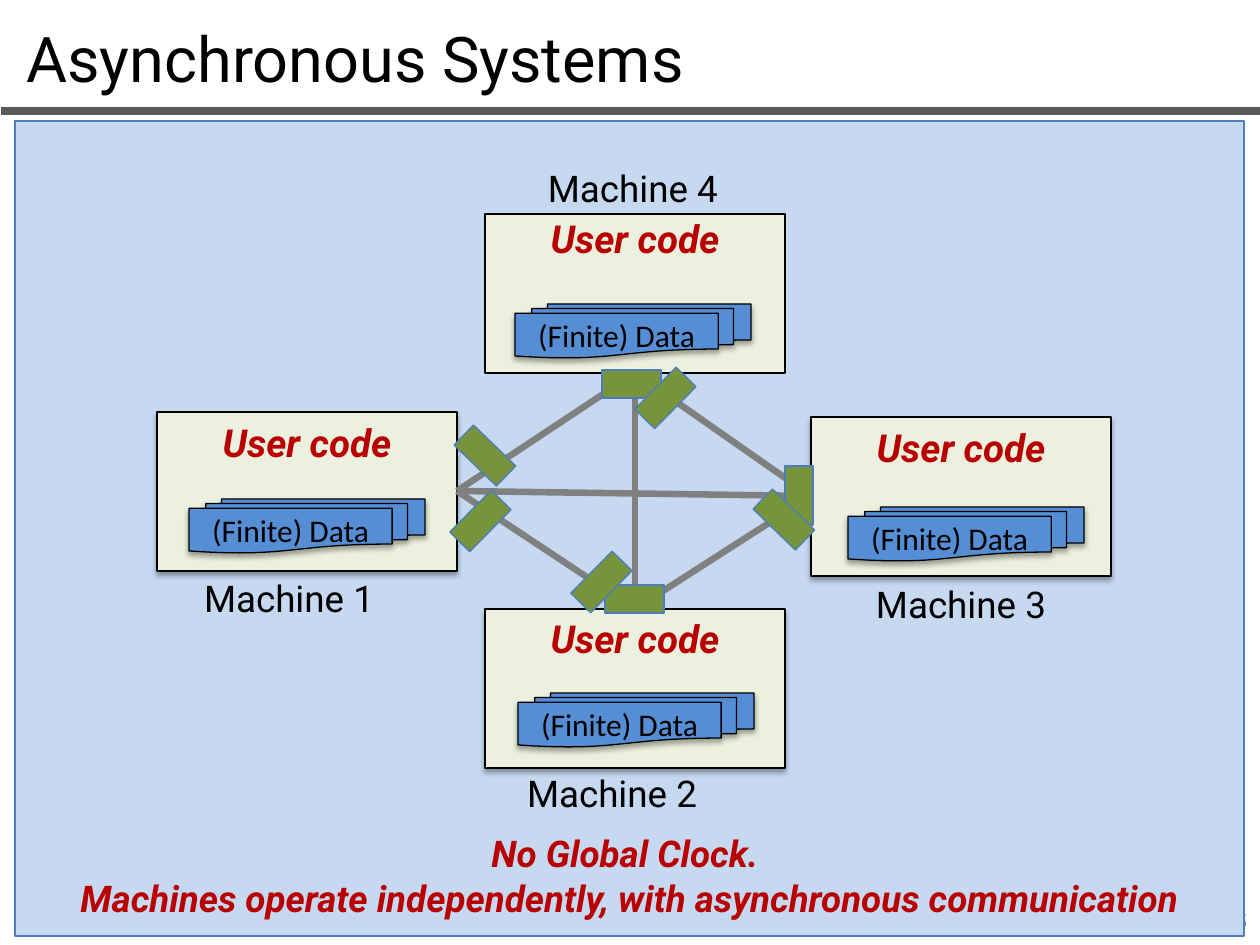
import itertools
from dataclasses import dataclass

import pptx
import pptx.dml.color
import pptx.enum.shapes
import pptx.enum.text
import pptx.oxml
import pptx.oxml.ns
import pptx.util

SCALE = 914400 / 126  # EMU per px
SHAPE = pptx.enum.shapes.MSO_SHAPE
ALIGN = pptx.enum.text.PP_ALIGN
ANCHOR = pptx.enum.text.MSO_ANCHOR


@dataclass(frozen=True)
class Style:
    size: float
    color: str
    font: str = "Roboto"
    strong: bool = False


@dataclass(frozen=True)
class Theme:
    panel: str = "C6D9F1"
    machine: str = "EBF1DE"
    data: str = "558ED5"
    buffer: str = "77933C"
    blue_edge: str = "4B7EBC"
    black: str = "000000"
    rule: str = "595959"
    link: str = "808080"
    title: Style = Style(36, "000000")
    label: Style = Style(21, "000000")
    code: Style = Style(22, "B90000", strong=True)
    message: Style = Style(21, "B90000", strong=True)
    data_text: Style = Style(18, "000000", "Calibri")
    number: Style = Style(12, "8C8C8C", "Calibri")


@dataclass(frozen=True)
class Area:
    left: int
    top: int
    width: int
    height: int


@dataclass(frozen=True)
class Machine:
    name: str
    left: int
    top: int
    label: Area
    code_top: int
    data_left: int
    data_top: int
    port: tuple[float, float]  # where links attach, as shares of the box
    shadow: bool = True

    @property
    def area(self) -> Area:
        return Area(self.left, self.top, 300, 159)

    @property
    def hub(self) -> tuple[int, int]:
        across, down = self.port
        return self.left + int(300 * across), self.top + int(159 * down)


@dataclass(frozen=True)
class Buffer:
    left: int
    top: int
    upright: bool = False
    rotation: float = 0


THEME = Theme()
MACHINES = [
    Machine("Machine 1", 157, 412, Area(180, 570, 218, 57), 413, 189, 499, (1, 0.5)),
    Machine("Machine 4", 485, 214, Area(474, 160, 318, 57), 209, 515, 304, (0.5, 1), False),
    Machine("Machine 3", 811, 417, Area(852, 576, 218, 57), 418, 848, 507, (0, 0.5)),
    Machine("Machine 2", 485, 609, Area(503, 765, 218, 57), 609, 518, 693, (0.5, 0)),
]
BUFFERS = [
    Buffer(605, 585),
    Buffer(602, 370),
    Buffer(785, 466, upright=True),
    Buffer(636, 384, rotation=314.6),
    Buffer(451, 507, rotation=314.6),
    Buffer(770, 490, upright=True, rotation=314.1),
    Buffer(471, 426, upright=True, rotation=314.1),
    Buffer(572, 568, rotation=314.6),
]


def px(value: float) -> int:
    return round(value * SCALE)


def rgb(color: str) -> pptx.dml.color.RGBColor:
    return pptx.dml.color.RGBColor.from_string(color)


def place(area: Area) -> list[int]:
    return [px(v) for v in (area.left, area.top, area.width, area.height)]


def write(frame, text: str, style: Style, align=ALIGN.CENTER, anchor=ANCHOR.TOP) -> None:
    frame.text = text
    frame.word_wrap = True
    frame.vertical_anchor = anchor
    for para in frame.paragraphs:
        para.alignment = align
        for span in para.runs:
            span.font.name = style.font
            span.font.size = pptx.util.Pt(style.size)
            span.font.color.rgb = rgb(style.color)
            span.font.bold = span.font.italic = style.strong


def add_text(page, area: Area, text: str, style: Style, align=ALIGN.CENTER, anchor=ANCHOR.TOP) -> None:
    box = page.shapes.add_textbox(*place(area))
    write(box.text_frame, text, style, align, anchor)


def add_box(page, area: Area, fill: str, edge: str, kind=SHAPE.RECTANGLE, shadow: bool = False):
    box = page.shapes.add_shape(kind, *place(area))
    box.fill.solid()
    box.fill.fore_color.rgb = rgb(fill)
    box.line.color.rgb = rgb(edge)
    box.line.width = pptx.util.Pt(0.75)
    box.shadow.inherit = False
    if shadow:
        effects = box._element.spPr.find(pptx.oxml.ns.qn("a:effectLst"))
        effects.append(pptx.oxml.parse_xml(
            f'<a:outerShdw {pptx.oxml.ns.nsdecls("a")} blurRad="39370" dist="22860" '
            'dir="5400000" rotWithShape="0"><a:srgbClr val="000000">'
            '<a:alpha val="35000"/></a:srgbClr></a:outerShdw>'))
    return box


def add_line(page, start: tuple[int, int], end: tuple[int, int], color: str, width: float) -> None:
    line = page.shapes.add_connector(
        pptx.enum.shapes.MSO_CONNECTOR.STRAIGHT, *[px(v) for v in (*start, *end)])
    line.line.color.rgb = rgb(color)
    line.line.width = pptx.util.Pt(width)
    line._element.spPr.append(
        pptx.oxml.parse_xml(f'<a:effectLst {pptx.oxml.ns.nsdecls("a")}/>'))


def add_buffer(page, buffer: Buffer) -> None:
    width, height = (28, 59) if buffer.upright else (59, 28)
    box = add_box(page, Area(buffer.left, buffer.top, width, height), THEME.buffer, THEME.blue_edge)
    box.rotation = buffer.rotation


def add_data(page, machine: Machine) -> None:
    area = Area(machine.data_left, machine.data_top, 236, 54)
    box = add_box(page, area, THEME.data, THEME.black, SHAPE.FLOWCHART_MULTIDOCUMENT, True)
    frame = box.text_frame
    frame.margin_left = frame.margin_right = px(9)
    frame.margin_top = frame.margin_bottom = px(5)
    write(frame, "(Finite) Data", THEME.data_text, anchor=ANCHOR.MIDDLE)


def main() -> None:
    deck = pptx.Presentation()
    deck.slide_width, deck.slide_height = px(1260), px(945)
    page = deck.slides.add_slide(deck.slide_layouts[6])

    # Title, rule, page number and panel
    add_line(page, (1, 111), (1261, 111), THEME.rule, 4.5)
    add_text(page, Area(14, 13, 1215, 89), "Asynchronous Systems", THEME.title, ALIGN.LEFT)
    add_text(page, Area(966, 895, 294, 50), "25", THEME.number, ALIGN.RIGHT, ANCHOR.MIDDLE)
    add_box(page, Area(15, 121, 1229, 815), THEME.panel, THEME.blue_edge)

    # Machines, each linked to every other one
    for machine in MACHINES:
        add_box(page, machine.area, THEME.machine, THEME.black, shadow=machine.shadow)
        add_text(page, machine.label, machine.name, THEME.label)
    for first, second in itertools.combinations(MACHINES, 2):
        add_line(page, first.hub, second.hub, THEME.link, 3.75)

    # Message buffers, code and data
    for buffer in BUFFERS:
        add_buffer(page, buffer)
    for machine in MACHINES:
        add_text(page, Area(machine.left, machine.code_top, 300, 59), "User code", THEME.code)
        add_data(page, machine)

    # Conclusion
    add_text(page, Area(15, 825, 1229, 102),
             "No Global Clock. \nMachines operate independently, with asynchronous communication",
             THEME.message)
    deck.save("out.pptx")


if __name__ == "__main__":
    main()
